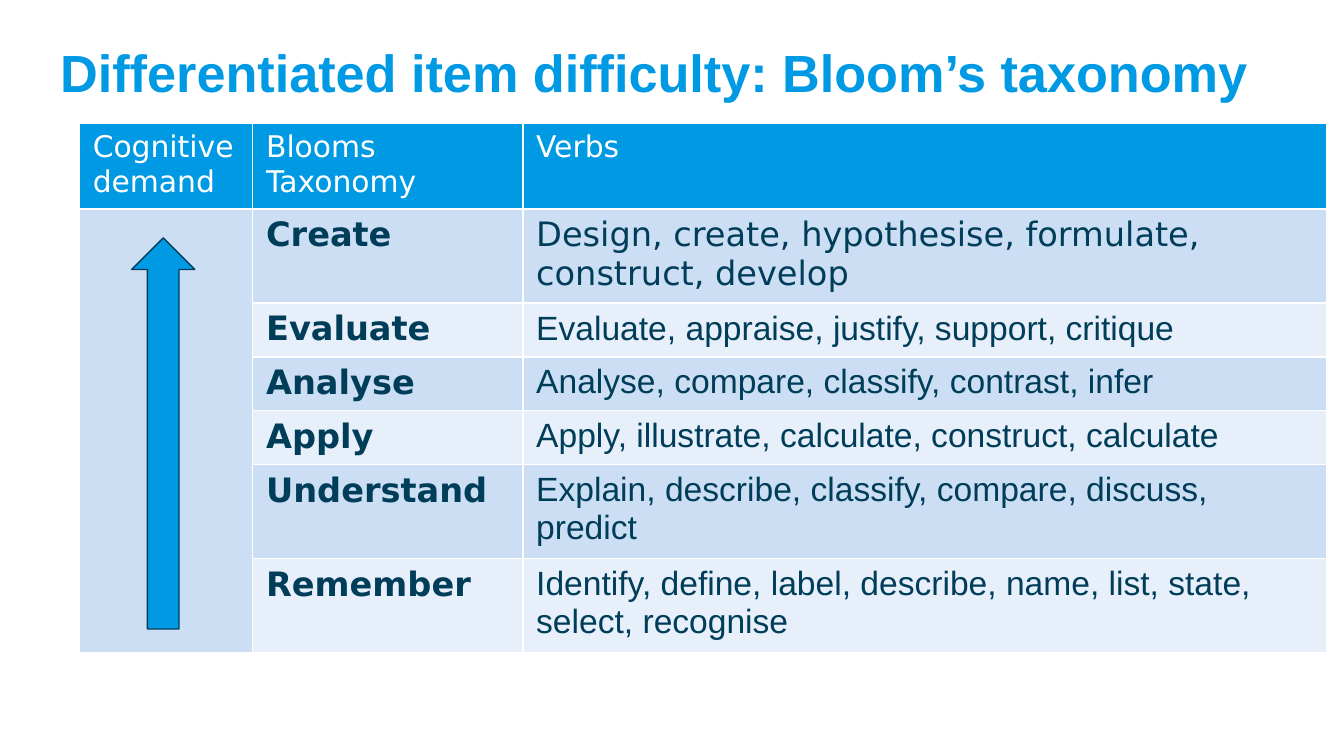
from lxml.etree import SubElement
from pptx import Presentation
from pptx.dml.color import RGBColor
from pptx.enum.shapes import MSO_SHAPE
from pptx.enum.text import MSO_ANCHOR
from pptx.oxml.ns import qn
from pptx.util import Inches, Pt

BLUE, NAVY, WHITE = "0099E3", "003D59", "FFFFFF"
BANDS = ["CCDEF4", "E7EFFA"]
SANS = "DejaVu Sans"


def rgb(color):
    return RGBColor.from_string(color)


def style_cell(cell, fill, text="", font="Arial", size=18, color=NAVY, bold=False):
    """Fill a cell, give it thin white borders and write its text."""
    tcPr = cell._tc.get_or_add_tcPr()
    for side in ("lnL", "lnR", "lnT", "lnB"):
        ln = SubElement(tcPr, qn(f"a:{side}"), w=str(Pt(1)))
        SubElement(SubElement(ln, qn("a:solidFill")), qn("a:srgbClr"), val=WHITE)
    cell.fill.solid()
    cell.fill.fore_color.rgb = rgb(fill)
    p = cell.text_frame.paragraphs[0]
    p.text = text
    p.font.name, p.font.size, p.font.bold = font, Pt(size), bold
    p.font.color.rgb = rgb(color)


prs = Presentation()
prs.slide_width, prs.slide_height = Inches(10), Inches(10 * 9 / 16)
s = prs.slides.add_slide(prs.slide_layouts[6])

# Title
tf = s.shapes.add_textbox(Inches(0.35), Inches(0.22), Inches(9.53), Inches(0.62)).text_frame
tf.word_wrap = True
tf.vertical_anchor = MSO_ANCHOR.MIDDLE
p = tf.paragraphs[0]
p.text = "Differentiated item difficulty: Bloom’s taxonomy"
p.font.name, p.font.size, p.font.bold = "Arial", Pt(28), True
p.font.color.rgb = rgb(BLUE)

# Taxonomy table: rows grow to fit their text
headers = ["Cognitive demand", "Blooms Taxonomy", "Verbs"]
levels = [
    ("Create", "Design, create, hypothesise, formulate, construct, develop", SANS),
    ("Evaluate", "Evaluate, appraise, justify, support, critique", "Arial"),
    ("Analyse", "Analyse, compare, classify, contrast, infer", "Arial"),
    ("Apply", "Apply, illustrate, calculate, construct, calculate", "Arial"),
    ("Understand", "Explain, describe, classify, compare, discuss, predict", "Arial"),
    ("Remember", "Identify, define, label, describe, name, list, state, select, recognise", "Arial"),
]
widths = [1.29, 2.01, 5.98]
heights = [0.39, 0.55, 0.32, 0.32, 0.32, 0.55, 0.55]
frame = s.shapes.add_table(len(heights), len(widths), Inches(0.59), Inches(0.92),
                           Inches(sum(widths)), Inches(sum(heights)))
table = frame.table
for column, width in zip(table.columns, widths):
    column.width = Inches(width)
for row, height in zip(table.rows, heights):
    row.height = Inches(height)
frame.height = Inches(3.93)

for col, header in enumerate(headers):
    style_cell(table.cell(0, col), BLUE, header, SANS, 16, WHITE)
for row, (level, verbs, verb_font) in enumerate(levels, start=1):
    band = BANDS[(row - 1) % 2]
    style_cell(table.cell(row, 0), BANDS[0])
    style_cell(table.cell(row, 1), band, level, SANS, bold=True)
    style_cell(table.cell(row, 2), band, verbs, verb_font)
table.cell(1, 0).merge(table.cell(len(levels), 0))

# Rising demand arrow
sp = s.shapes.add_shape(MSO_SHAPE.UP_ARROW, Inches(0.98), Inches(1.77), Inches(0.47), Inches(2.91))
sp.shadow.inherit = False
sp.fill.solid()
sp.fill.fore_color.rgb = rgb(BLUE)
sp.line.color.rgb = rgb(NAVY)
sp.line.width = Pt(0.75)

prs.save("out.pptx")
